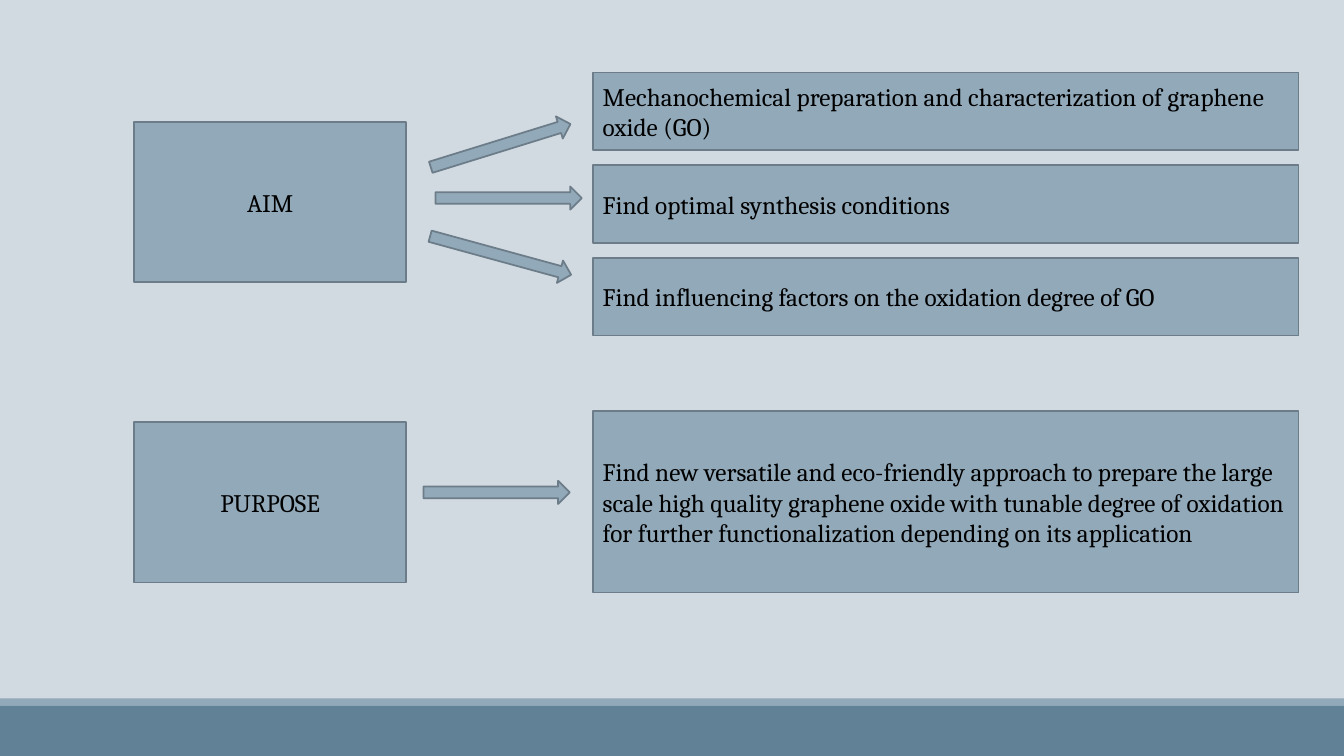
import pptx
import pptx.util
import pptx.dml.color
import pptx.enum.shapes
import pptx.enum.text

Inches = pptx.util.Inches
RGBColor = pptx.dml.color.RGBColor
SHAPE = pptx.enum.shapes.MSO_SHAPE
ALIGN = pptx.enum.text.PP_ALIGN

BACKGROUND = RGBColor(0xD1, 0xD9, 0xE1)
PANEL = RGBColor(0x92, 0xA9, 0xB9)
OUTLINE = RGBColor(0x6C, 0x7D, 0x89)
FOOTER = RGBColor(0x61, 0x81, 0x97)
TEXT = RGBColor(0, 0, 0)

SLIDE_W, SLIDE_H = 13.33, 7.5
LABEL_W, LABEL_H = 2.7, 1.59
DETAIL_X, DETAIL_W = 4.55, 7
DETAIL_GAP = 0.15
ARROW_W, ARROW_H = 1.45, 0.23


def add_panel(slide, kind, x, y, w, h, fill=PANEL, outlined=True):
    sp = slide.shapes.add_shape(kind, Inches(x), Inches(y), Inches(w), Inches(h))
    sp.shadow.inherit = False
    sp.fill.solid()
    sp.fill.fore_color.rgb = fill
    if outlined:
        sp.line.color.rgb = OUTLINE
        sp.line.width = pptx.util.Pt(1.25)
    else:
        sp.line.fill.background()
    return sp


def add_text_box(slide, text, x, y, w, h, align):
    sp = add_panel(slide, SHAPE.RECTANGLE, x, y, w, h)
    tf = sp.text_frame
    tf.word_wrap = True
    tf.vertical_anchor = pptx.enum.text.MSO_ANCHOR.MIDDLE
    tf.text = text
    p = tf.paragraphs[0]
    p.alignment = align
    font = p.runs[0].font
    font.name = "Cambria"
    font.size = pptx.util.Pt(18)
    font.color.rgb = TEXT


def add_topic(slide, x, y, label, details, detail_dy, detail_h, arrows):
    add_text_box(slide, label, x, y, LABEL_W, LABEL_H, ALIGN.CENTER)
    for dx, dy, angle in arrows:
        arrow = add_panel(slide, SHAPE.RIGHT_ARROW, x + LABEL_W + dx, y + dy,
                          ARROW_W, ARROW_H)
        arrow.rotation = angle
    for row, text in enumerate(details):
        top = y + detail_dy + row * (detail_h + DETAIL_GAP)
        add_text_box(slide, text, x + DETAIL_X, top, DETAIL_W, detail_h, ALIGN.LEFT)


def add_footer(slide, y, stripe_h):
    add_panel(slide, SHAPE.RECTANGLE, 0, y, SLIDE_W, stripe_h, PANEL, False)
    top = y + stripe_h
    add_panel(slide, SHAPE.RECTANGLE, 0, top, SLIDE_W, SLIDE_H - top, FOOTER, False)


def main():
    prs = pptx.Presentation()
    prs.slide_width = Inches(SLIDE_W)
    prs.slide_height = Inches(SLIDE_H)
    slide = prs.slides.add_slide(prs.slide_layouts[6])
    slide.background.fill.solid()
    slide.background.fill.fore_color.rgb = BACKGROUND

    add_footer(slide, 6.93, 0.07)
    add_topic(
        slide, 1.33, 1.21, "AIM",
        ["Mechanochemical preparation and characterization of graphene oxide (GO)",
         "Find optimal synthesis conditions",
         "Find influencing factors on the oxidation degree of GO"],
        detail_dy=-0.49, detail_h=0.77,
        arrows=[(0.21, 0.12, 342.8), (0.29, 0.64, 0), (0.21, 1.21, 15.3)])
    add_topic(
        slide, 1.33, 4.19, "PURPOSE",
        ["Find new versatile and eco-friendly approach to prepare the large scale "
         "high quality graphene oxide with tunable degree of oxidation for further "
         "functionalization depending on its application"],
        detail_dy=-0.11, detail_h=1.8,
        arrows=[(0.17, 0.58, 0)])
    prs.save("out.pptx")


if __name__ == "__main__":
    main()
